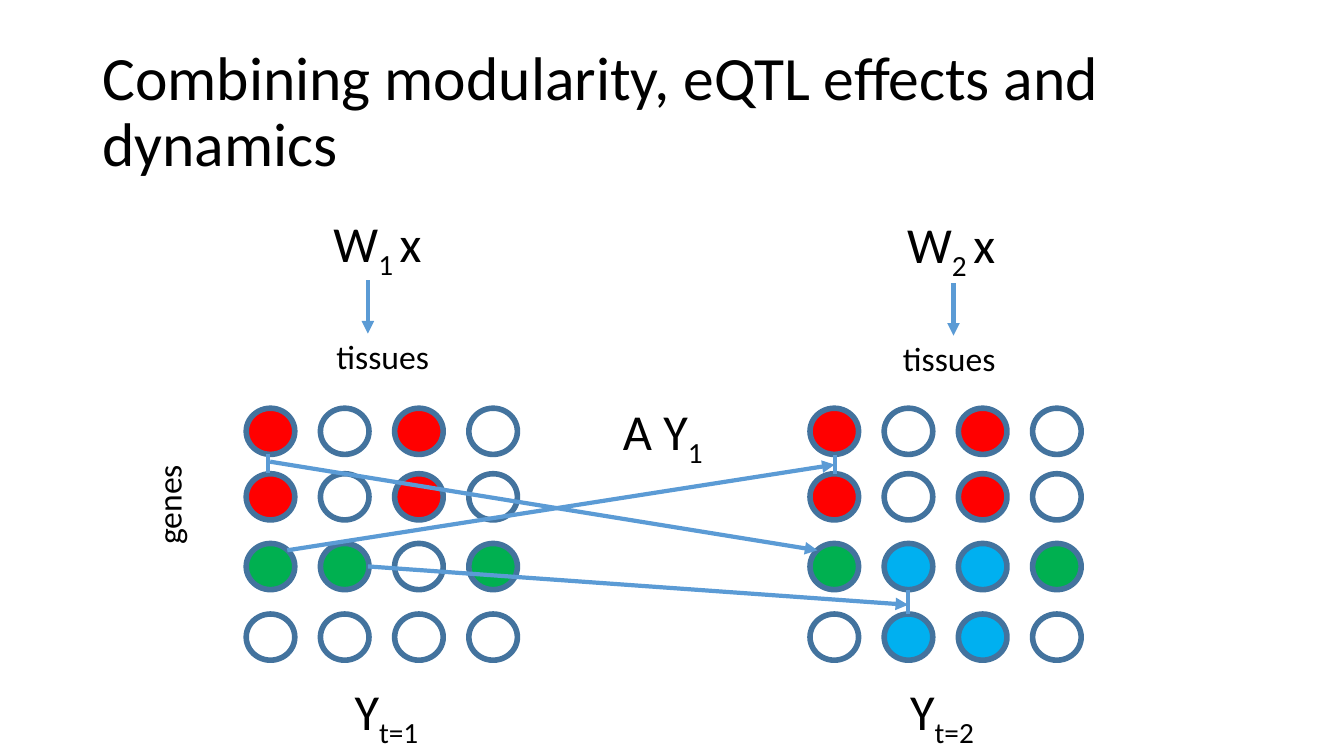
from lxml.etree import SubElement
from pptx import Presentation
from pptx.dml.color import RGBColor
from pptx.enum.shapes import MSO_CONNECTOR as Connector, MSO_SHAPE as Shape
from pptx.enum.text import MSO_ANCHOR as Anchor
from pptx.oxml.ns import qn
from pptx.util import Pt

BLACK, OUTLINE, ARROW = "000000", "43739E", "5B9BD5"
FILLS = {"R": "FF0000", "G": "00B050", "B": "00B0F0"}
CIRCLE_W, CIRCLE_H, COLUMN_STEP = 34.7, 33, 53
ROW_TOPS = [291.6, 338.4, 388.2, 438.6]
GENES_AT_1 = ["R.R.", "R.R.", "GG.G", "...."]
GENES_AT_2 = ["R.R.", "R.R.", "GBBG", ".BB."]


def colour(hex_string):
    return RGBColor.from_string(hex_string)


def add_label(slide, left, top, width, height, parts, size, rotation=0):
    label = slide.shapes.add_textbox(Pt(left), Pt(top), Pt(width), Pt(height))
    label.rotation = rotation
    label.text_frame.word_wrap = True
    paragraph = label.text_frame.paragraphs[0]
    for words, is_subscript in parts:
        run = paragraph.add_run()
        run.text = words
        run.font.name = "Calibri"
        run.font.size = Pt(size)
        run.font.color.rgb = colour(BLACK)
        if is_subscript:
            run._r.get_or_add_rPr().set("baseline", "-25000")
    return label


def add_title(slide, words):
    title = add_label(slide, 66, 28.75, 828, 104.4, [(words, False)], 44)
    title.text_frame.vertical_anchor = Anchor.MIDDLE
    title.text_frame.paragraphs[0].line_spacing = 0.9


def add_formula(slide, left, top, *parts):
    add_label(slide, left, top, 101.5, 51, parts, 36)


def add_axis_name(slide, left, top, words, rotation=0):
    add_label(slide, left, top, 139.7, 36, [(words, False)], 24, rotation)


def add_circle(slide, left, top, fill):
    circle = slide.shapes.add_shape(
        Shape.OVAL, Pt(left), Pt(top), Pt(CIRCLE_W), Pt(CIRCLE_H))
    circle.shadow.inherit = False
    circle.line.color.rgb = colour(OUTLINE)
    circle.line.width = Pt(4)
    if fill:
        circle.fill.solid()
        circle.fill.fore_color.rgb = colour(fill)
    else:
        circle.fill.background()


def add_gene_grid(slide, left, rows):
    for top, row in zip(ROW_TOPS, rows):
        for column, key in enumerate(row):
            add_circle(slide, left + column * COLUMN_STEP, top, FILLS.get(key))


def add_link(slide, x1, y1, x2, y2, arrow=True):
    link = slide.shapes.add_connector(
        Connector.STRAIGHT, Pt(x1), Pt(y1), Pt(x2), Pt(y2))
    link.line.color.rgb = colour(ARROW)
    link.line.width = Pt(3)
    if arrow:
        SubElement(link.line._get_or_add_ln(), qn("a:tailEnd"), type="triangle")
    SubElement(link._element.spPr, qn("a:effectLst"))


def main():
    deck = Presentation()
    deck.slide_width, deck.slide_height = Pt(960), Pt(540)
    slide = deck.slides.add_slide(deck.slide_layouts[6])

    add_title(slide, "Combining modularity, eQTL effects and dynamics")
    add_gene_grid(slide, 175.9, GENES_AT_1)
    add_gene_grid(slide, 578.6, GENES_AT_2)

    add_axis_name(slide, 233.3, 236.2, "tissues")
    add_axis_name(slide, 637.9, 238, "tissues")
    add_axis_name(slide, 50.4, 308.2, "genes", 270)

    add_formula(slide, 246.2, 482.4, ("Y", False), ("t=1", True))
    add_formula(slide, 643, 482.4, ("Y", False), ("t=2", True))
    add_formula(slide, 231.1, 148.3, ("W", False), ("1 ", True), ("x", False))
    add_formula(slide, 640.8, 149, ("W", False), ("2 ", True), ("x", False))
    add_formula(slide, 437.8, 282.2, ("A Y", False), ("1", True))

    add_link(slide, 262.8, 200.2, 262.8, 238.3)
    add_link(slide, 681.1, 202.3, 681.1, 239.8)
    add_link(slide, 193, 329.8, 583.9, 393.1)
    add_link(slide, 205.2, 393.1, 596.2, 331.9)
    add_link(slide, 262.8, 404.6, 648.7, 432)

    add_link(slide, 596.2, 324.7, 596.2, 338.4, arrow=False)
    add_link(slide, 191.5, 324, 191.5, 337.7, arrow=False)
    add_link(slide, 648.7, 421.2, 648.7, 438.5, arrow=False)

    deck.save("out.pptx")


if __name__ == "__main__":
    main()
